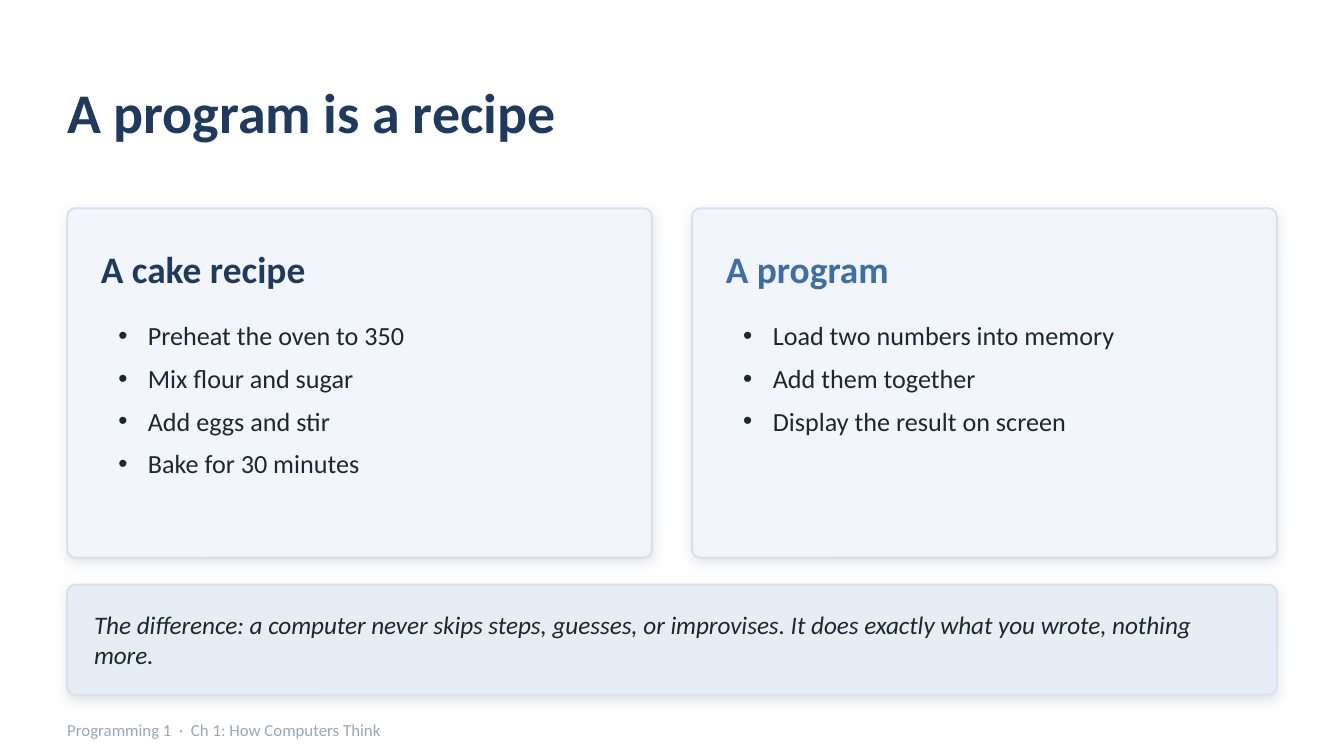
import dataclasses
import typing

import lxml.etree
import pptx
import pptx.dml.color
import pptx.enum.shapes
import pptx.enum.text
import pptx.oxml.ns
import pptx.util

SLIDE_WIDTH = 10
SLIDE_HEIGHT = SLIDE_WIDTH * 9 / 16
MARGIN, GUTTER, COLUMNS = 0.5, 0.3, 2
CONTENT_WIDTH = SLIDE_WIDTH - 2 * MARGIN
COLUMN_WIDTH = (CONTENT_WIDTH - GUTTER * (COLUMNS - 1)) / COLUMNS
CARD_TOP, CARD_HEIGHT, CARD_PADDING = 1.55, 2.6, 0.25
CALLOUT_TOP, CALLOUT_HEIGHT = 4.35, 0.82
CORNER_RADIUS = 0.06
BULLET_INDENT = 0.22
FONT = "Calibri"
NAVY, BLUE, INK, MUTED = "1F3A5F", "3D6EA5", "1B2733", "9AA8B6"
CARD_FILL, CALLOUT_FILL, BORDER = "F2F5F9", "E7EDF4", "D8E0E9"


@dataclasses.dataclass(frozen=True)
class Box:
    left: float
    top: float
    width: float
    height: float


@dataclasses.dataclass(frozen=True)
class Style:
    size: float
    colour: str
    bold: bool = False
    italic: bool = False


@dataclasses.dataclass(frozen=True)
class Column:
    heading: str
    heading_colour: str
    steps: tuple[str, ...]


RECIPES = (
    Column("A cake recipe", NAVY, (
        "Preheat the oven to 350",
        "Mix flour and sugar",
        "Add eggs and stir",
        "Bake for 30 minutes",
    )),
    Column("A program", BLUE, (
        "Load two numbers into memory",
        "Add them together",
        "Display the result on screen",
    )),
)


def rgb(colour: str) -> pptx.dml.color.RGBColor:
    return pptx.dml.color.RGBColor.from_string(colour)


def set_all(target: typing.Any, values: dict[str, typing.Any]) -> None:
    for name, value in values.items():
        setattr(target, name, value)


def place(shape: typing.Any, box: Box) -> None:
    set_all(shape, {
        side: pptx.util.Inches(length)
        for side, length in dataclasses.asdict(box).items()
    })


def add_bullet(paragraph: typing.Any) -> None:
    properties = paragraph._p.get_or_add_pPr()
    indent = pptx.util.Inches(BULLET_INDENT)
    properties.set("marL", str(indent))
    properties.set("indent", str(-indent))
    lxml.etree.SubElement(properties, pptx.oxml.ns.qn("a:buFont"), typeface="Arial")
    lxml.etree.SubElement(properties, pptx.oxml.ns.qn("a:buChar"), char="•")


def write(shape: typing.Any, lines: tuple[str, ...], style: Style, bulleted: bool = False) -> None:
    frame = shape.text_frame
    anchors = pptx.enum.text.MSO_ANCHOR
    set_all(frame, {
        "word_wrap": True,
        "auto_size": pptx.enum.text.MSO_AUTO_SIZE.NONE,
        "vertical_anchor": anchors.TOP if bulleted else anchors.MIDDLE,
    })
    if not bulleted:
        set_all(frame, dict.fromkeys(
            ("margin_left", "margin_top", "margin_right", "margin_bottom"), 0))
    frame.text = "\n".join(lines)
    for paragraph in frame.paragraphs:
        if bulleted:
            add_bullet(paragraph)
        set_all(paragraph, {
            "alignment": pptx.enum.text.PP_ALIGN.LEFT,
            "space_before": pptx.util.Pt(0),
            "space_after": pptx.util.Pt(6 if bulleted else 0),
        })
        for run in paragraph.runs:
            set_all(run.font, {
                "name": FONT,
                "size": pptx.util.Pt(style.size),
                "bold": style.bold,
                "italic": style.italic,
            })
            run.font.color.rgb = rgb(style.colour)


def add_soft_shadow(shape: typing.Any) -> None:
    shape.shadow.inherit = False
    effects = shape.element.spPr.find(pptx.oxml.ns.qn("a:effectLst"))
    shadow = lxml.etree.SubElement(
        effects, pptx.oxml.ns.qn("a:outerShdw"),
        blurRad=str(pptx.util.Pt(6)), dist=str(pptx.util.Pt(2)),
        dir="5400000", algn="bl", rotWithShape="0")
    tint = lxml.etree.SubElement(shadow, pptx.oxml.ns.qn("a:srgbClr"), val=MUTED)
    lxml.etree.SubElement(tint, pptx.oxml.ns.qn("a:alpha"), val="28000")


def add_panel(slide: typing.Any, box: Box, fill: str) -> typing.Any:
    panel = slide.shapes.add_shape(
        pptx.enum.shapes.MSO_SHAPE.ROUNDED_RECTANGLE, 0, 0, 0, 0)
    place(panel, box)
    panel.adjustments[0] = CORNER_RADIUS / box.height
    panel.fill.solid()
    panel.fill.fore_color.rgb = rgb(fill)
    panel.line.color.rgb = rgb(BORDER)
    panel.line.width = pptx.util.Pt(1)
    add_soft_shadow(panel)
    return panel


def add_note(slide: typing.Any, box: Box, text: str, style: Style) -> None:
    note = slide.shapes.add_textbox(0, 0, 0, 0)
    place(note, box)
    write(note, (text,), style)


def fill_column(slide: typing.Any, index: int, column: Column) -> None:
    left = MARGIN + index * (COLUMN_WIDTH + GUTTER)
    text_left = left + CARD_PADDING
    text_width = COLUMN_WIDTH - 2 * CARD_PADDING
    heading = slide.placeholders[2 * index + 1]
    steps = slide.placeholders[2 * index + 2]

    card = add_panel(slide, Box(left, CARD_TOP, COLUMN_WIDTH, CARD_HEIGHT), CARD_FILL)
    heading.element.addprevious(card.element)
    place(heading, Box(text_left, CARD_TOP + 0.2, text_width, 0.5))
    write(heading, (column.heading,), Style(20, column.heading_colour, bold=True))
    place(steps, Box(text_left + 0.03, CARD_TOP + 0.78, text_width, 1.6))
    write(steps, column.steps, Style(14, INK), bulleted=True)


def main() -> None:
    deck = pptx.Presentation()
    deck.slide_width = pptx.util.Inches(SLIDE_WIDTH)
    deck.slide_height = pptx.util.Inches(SLIDE_HEIGHT)
    slide = deck.slides.add_slide(deck.slide_layouts.get_by_name("Comparison"))

    title = slide.shapes.title
    place(title, Box(MARGIN, 0.4, CONTENT_WIDTH, 0.85))
    write(title, ("A program is a recipe",), Style(30, NAVY, bold=True))

    for index, column in enumerate(RECIPES):
        fill_column(slide, index, column)

    add_panel(slide, Box(MARGIN, CALLOUT_TOP, CONTENT_WIDTH, CALLOUT_HEIGHT), CALLOUT_FILL)
    add_note(
        slide,
        Box(MARGIN + 0.2, CALLOUT_TOP + 0.05, CONTENT_WIDTH - 0.4, CALLOUT_HEIGHT - 0.1),
        "The difference: a computer never skips steps, guesses, or improvises. "
        "It does exactly what you wrote, nothing more.",
        Style(13.5, INK, italic=True))
    add_note(
        slide, Box(MARGIN, 5.3, 8, 0.26),
        "Programming 1  ·  Ch 1: How Computers Think", Style(9, MUTED))

    deck.save("out.pptx")


if __name__ == "__main__":
    main()
